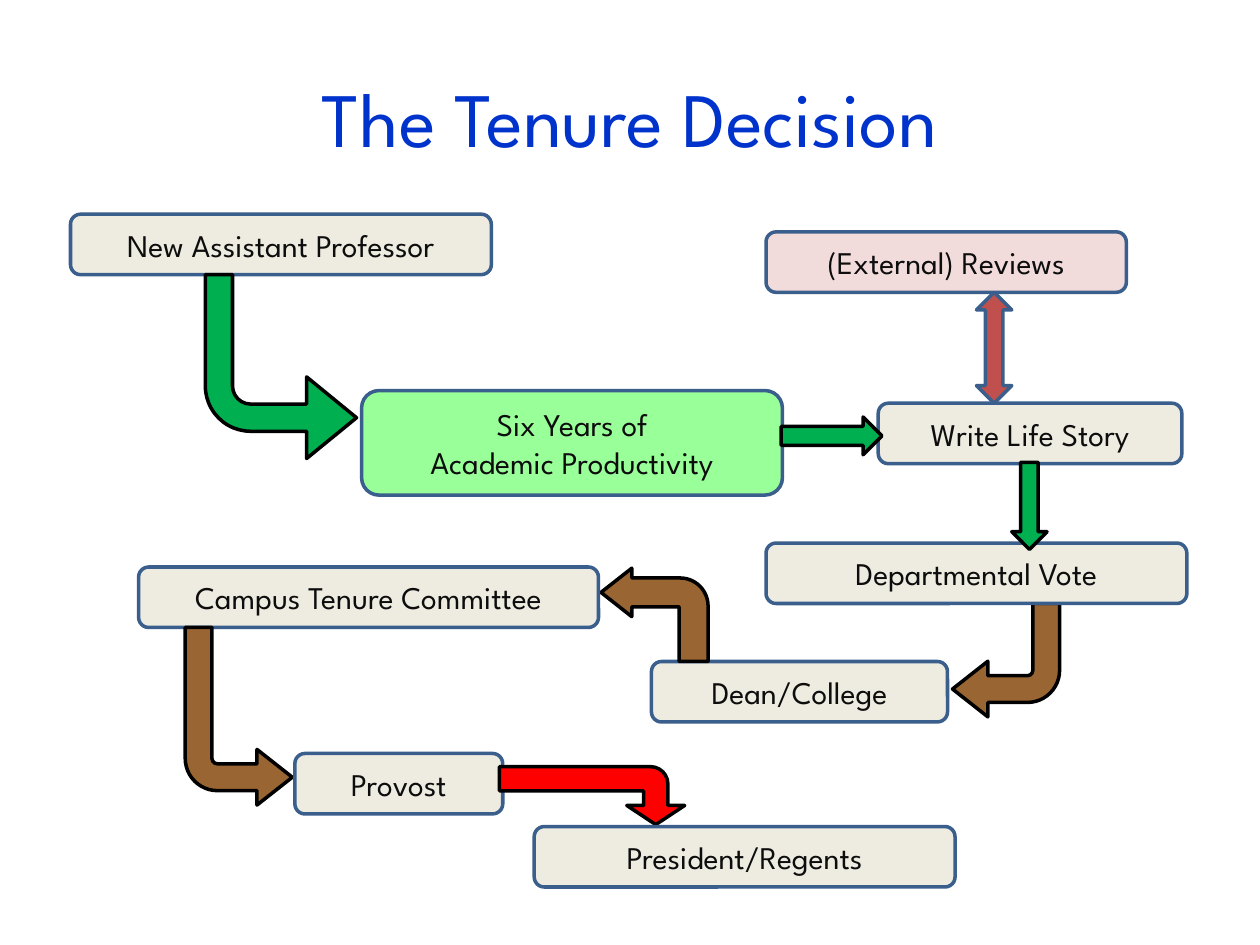
from pptx import Presentation
from pptx.dml.color import RGBColor
from pptx.enum.shapes import MSO_SHAPE
from pptx.enum.text import MSO_ANCHOR, PP_ALIGN
from pptx.util import Inches, Pt

COLORS = {
    "title": "0033CC", "text": "0D0D0D", "beige": "EEECE1", "mint": "99FF99",
    "pink": "F2DCDB", "blue": "3A5F8C", "black": "000000", "green": "00B050",
    "brown": "996633", "red": "FF0000", "brick": "C0504D",
}
STEP_HEIGHT = 0.48
BROWN_BEND = (0.25, 0.26, 0.33, 0.3)


def color(name):
    """Return the named colour."""
    return RGBColor.from_string(COLORS[name])


def write(frame, text, size=18, ink="text", font="League Spartan"):
    """Put centred, formatted text in a frame."""
    frame.word_wrap = True
    frame.vertical_anchor = MSO_ANCHOR.MIDDLE
    para = frame.paragraphs[0]
    para.text = text
    para.alignment = PP_ALIGN.CENTER
    for span in para.runs:
        span.font.name = font
        span.font.size = Pt(size)
        span.font.color.rgb = color(ink)


class FlowSlide:
    """Hold the slide and draw its flow chart."""

    def __init__(self, page, line_width=2):
        """Keep the page and the outline width."""
        self.page = page
        self.line_width = line_width

    def title(self, text, left, top, width, height):
        """Add the heading."""
        box = self.page.shapes.add_textbox(
            Inches(left), Inches(top), Inches(width), Inches(height))
        write(box.text_frame, text, size=44, ink="title")

    def shape(self, kind, left, top, width, height, fill, line):
        """Add a filled and outlined preset shape."""
        shape = self.page.shapes.add_shape(
            kind, Inches(left), Inches(top), Inches(width), Inches(height))
        shape.shadow.inherit = False
        shape.fill.solid()
        shape.fill.fore_color.rgb = color(fill)
        shape.line.color.rgb = color(line)
        shape.line.width = Pt(self.line_width)
        return shape

    def step(self, text, left, top, width, height=STEP_HEIGHT, fill="beige"):
        """Add a rounded box with a label."""
        box = self.shape(MSO_SHAPE.ROUNDED_RECTANGLE,
                         left, top, width, height, fill, "blue")
        write(box.text_frame, text)

    def arrow(self, kind, left, top, width, height, fill="green", line="black"):
        """Add a straight block arrow."""
        self.shape(kind, left, top, width, height, fill, line)

    def bend(self, left, top, width, height, flip, fill="brown",
             bend=BROWN_BEND, rotation=0):
        """Add a bent block arrow, mirrored along the axes named in flip."""
        arrow = self.shape(MSO_SHAPE.BENT_ARROW,
                           left, top, width, height, fill, "black")
        for index, value in enumerate(bend):
            arrow.adjustments[index] = value
        arrow.rotation = rotation
        for axis in flip:
            arrow.element.spPr.xfrm.set("flip" + axis, "1")


def main():
    """Build the tenure flow chart."""
    deck = Presentation()
    deck.slide_width, deck.slide_height = Inches(10), Inches(7.5)
    flow = FlowSlide(deck.slides.add_slide(deck.slide_layouts[6]))

    flow.title("The Tenure Decision", 0.5, 0.3, 9, 1.25)
    flow.step("New Assistant Professor", 0.56, 1.7, 3.34)
    flow.step("Six Years of\nAcademic Productivity", 2.87, 3.1, 3.34,
              height=0.83, fill="mint")
    flow.bend(1.63, 2.18, 1.2, 1.46, "V", fill="green",
              bend=(0.18, 0.27, 0.33, 0.3))
    flow.bend(7.56, 4.79, 0.85, 0.9, "HV")
    flow.step("Dean/College", 5.17, 5.25, 2.35)
    flow.bend(4.77, 4.51, 0.85, 0.74, "H", bend=(0.31, 0.26, 0.33, 0.3))
    flow.step("Campus Tenure Committee", 1.1, 4.5, 3.65)
    flow.bend(1.47, 4.98, 0.85, 1.41, "V")
    flow.step("Provost", 2.34, 5.98, 1.65)
    flow.bend(4.47, 5.58, 0.46, 1.47, "HV", fill="red",
              bend=(0.42, 0.5, 0.33, 0.3), rotation=270)
    flow.step("President/Regents", 4.24, 6.56, 3.34)
    flow.step("Write Life Story", 6.97, 3.2, 2.41)
    flow.arrow(MSO_SHAPE.RIGHT_ARROW, 6.2, 3.31, 0.8, 0.3)
    flow.step("Departmental Vote", 6.08, 4.31, 3.34)
    flow.arrow(MSO_SHAPE.DOWN_ARROW, 8.03, 3.67, 0.28, 0.69)
    flow.step("(External) Reviews", 6.08, 1.84, 2.86, fill="pink")
    flow.arrow(MSO_SHAPE.UP_DOWN_ARROW, 7.75, 2.32, 0.28, 0.88,
               fill="brick", line="blue")

    deck.save("out.pptx")


if __name__ == "__main__":
    main()
